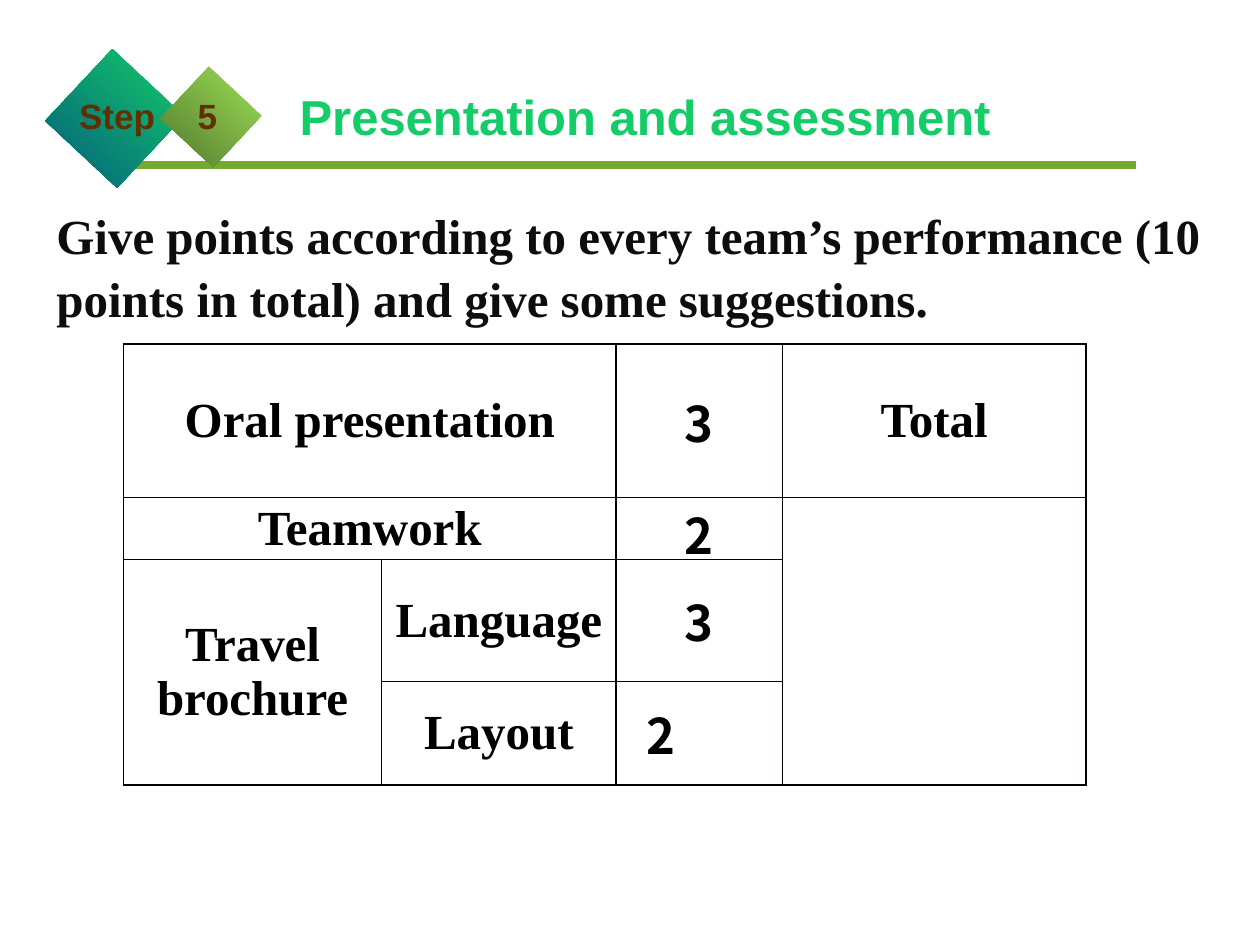
from lxml import etree
from pptx import Presentation
from pptx.dml.color import RGBColor
from pptx.enum.shapes import MSO_CONNECTOR, MSO_SHAPE
from pptx.enum.text import MSO_ANCHOR, PP_ALIGN
from pptx.oxml.ns import qn
from pptx.util import Inches, Pt

LINE = MSO_CONNECTOR.STRAIGHT
RECT = MSO_SHAPE.RECTANGLE
MID = MSO_ANCHOR.MIDDLE
LEFT, CENTER = PP_ALIGN.LEFT, PP_ALIGN.CENTER

SANS, SERIF, DIGIT = "Arial", "Times New Roman", "Noto Sans CJK SC"
COLORS = {
    "rule": "76A932", "green": "14CD68", "teal": "035C7D",
    "lime": "9EE256", "moss": "52762D", "brown": "612F02",
    "ink": "0D0D0D", "black": "000000", "edge": "080000",
}


def rgb(name):
    return RGBColor.from_string(COLORS[name])


def write(frame, text, name, size, color, align=LEFT):
    para = frame.paragraphs[0]
    para.alignment = align
    run = para.add_run()
    run.text = text
    look = {"name": name, "size": Pt(size), "bold": True}
    for key, value in look.items():
        setattr(run.font, key, value)
    run.font.color.rgb = rgb(color)
    if name == DIGIT:
        east = etree.SubElement(run.font._element, qn("a:ea"))
        east.set("typeface", name)
    return para


prs = Presentation()
prs.slide_width, prs.slide_height = Inches(10), Inches(7.5)
slide = prs.slides.add_slide(prs.slide_layouts[6])
shapes = slide.shapes

# Rule under the heading
rule = shapes.add_connector(
    LINE, Inches(1.06), Inches(1.31), Inches(9.02), Inches(1.31))
rule.line.color.rgb = rgb("rule")
rule.line.width = Pt(4.5)
etree.SubElement(rule._element.spPr, qn("a:effectLst"))

# Tilted squares behind the step number
for x, y, w, h, start, end in (
    (0.52, 0.55, 0.78, 0.78, "green", "teal"),
    (1.39, 0.65, 0.57, 0.56, "lime", "moss"),
):
    box = shapes.add_shape(RECT, Inches(x), Inches(y), Inches(w), Inches(h))
    box.rotation = 43
    box.shadow.inherit = False
    box.line.fill.background()
    box.fill.gradient()
    box.fill.gradient_angle = 270
    for stop, color, spot in zip(
            box.fill.gradient_stops, (start, end), (0, 1)):
        stop.color.rgb = rgb(color)
        stop.position = spot

# Heading, step label and task
for x, y, w, h, text, name, size, color, wrap, gap in (
    (2.28, 0.64, 5.77, 0.57, "Presentation and assessment",
     SANS, 28, "green", True, 1),
    (1.47, 0.7, 0.35, 0.44, "5", SANS, 20, "brown", False, 1),
    (0.53, 0.7, 0.8, 0.44, "Step", SANS, 20, "brown", False, 1),
    (0.35, 1.55, 9.9, 1.51,
     "Give points according to every team’s performance "
     "(10 points in total) and give some suggestions.",
     SERIF, 28, "ink", True, 1.07),
):
    box = shapes.add_textbox(Inches(x), Inches(y), Inches(w), Inches(h))
    box.text_frame.word_wrap = wrap
    para = write(box.text_frame, text, name, size, color)
    para.line_spacing = gap

# Score table
cols, rows = (2.05, 1.86, 1.32, 2.41), (1.22, 0.49, 0.97, 0.82)
table = shapes.add_table(
    len(rows), len(cols), Inches(0.98), Inches(2.73),
    Inches(sum(cols)), Inches(sum(rows))).table
table.first_row = table.horz_banding = False
for col, width in zip(table.columns, cols):
    col.width = Inches(width)
for row, height in zip(table.rows, rows):
    row.height = Inches(height)

# Cell margins, borders and fill
for cell in table.iter_cells():
    cell.vertical_anchor = MID
    cell.margin_left = cell.margin_right = Inches(0.07)
    cell.margin_top = cell.margin_bottom = 0
    props = cell._tc.get_or_add_tcPr()
    for side in ("lnL", "lnR", "lnT", "lnB"):
        edge = etree.SubElement(props, qn("a:" + side), w=str(Pt(1)))
        solid = etree.SubElement(edge, qn("a:solidFill"))
        etree.SubElement(solid, qn("a:srgbClr"), val=COLORS["edge"])
    cell.fill.background()

# Merged cells
for top, left, bottom, right in (
        (0, 0, 0, 1), (1, 0, 1, 1), (1, 3, 3, 3), (2, 0, 3, 0)):
    table.cell(top, left).merge(table.cell(bottom, right))

# Cell text
grid = (
    ("Oral presentation", "", "3", "Total"),
    ("Teamwork", "", "2", ""),
    ("Travel brochure", "Language", "3", ""),
    ("", "Layout", "2", ""),
)
for r, texts in enumerate(grid):
    for c, text in enumerate(texts):
        if text:
            name = DIGIT if c == 2 else SERIF
            write(table.cell(r, c).text_frame, text, name, 28, "black", CENTER)

# The last score sits near the left edge
last = table.cell(3, 2)
last.margin_left = Inches(0.24)
last.text_frame.paragraphs[0].alignment = LEFT

prs.save("out.pptx")
